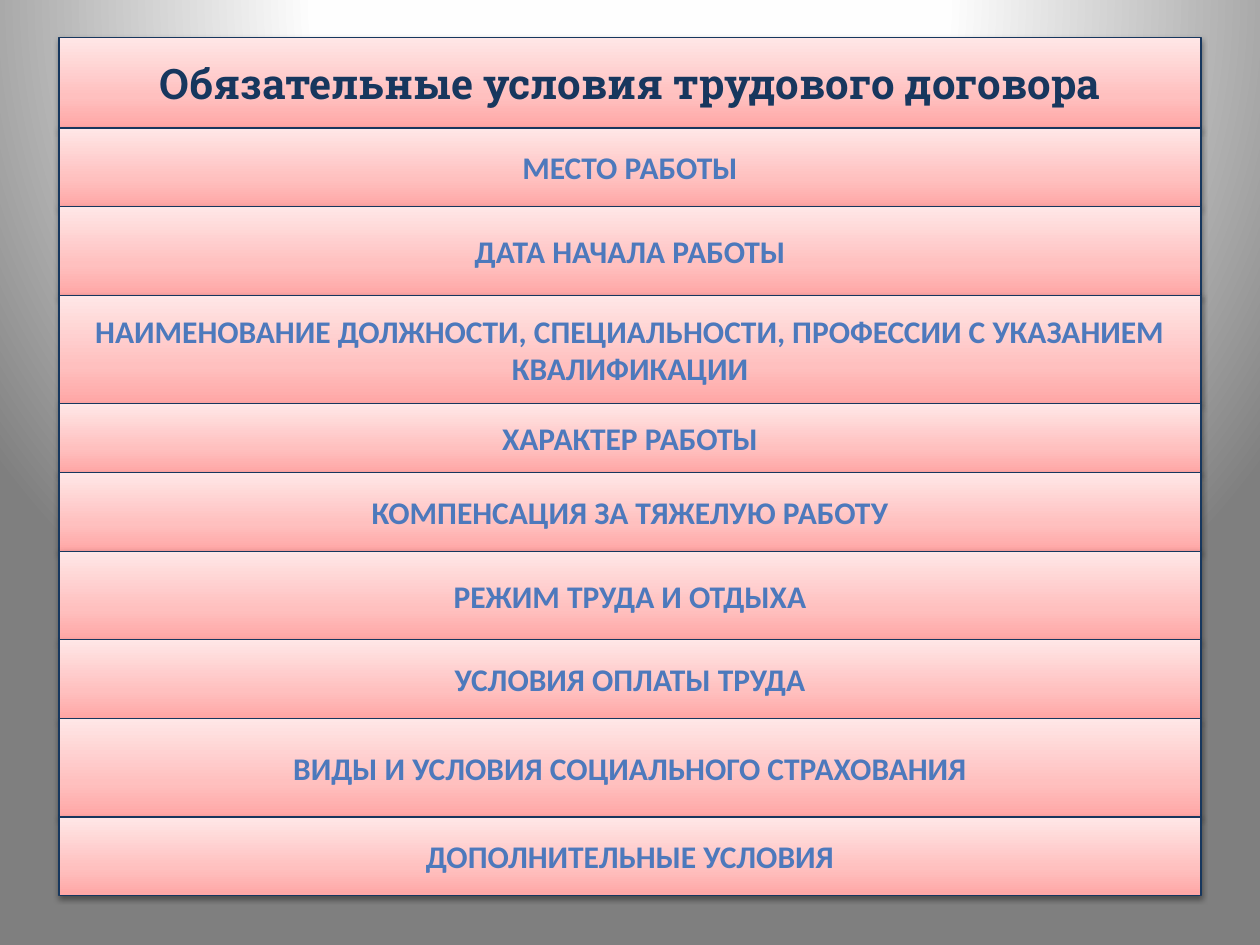
"""Build a slide stacking the mandatory terms of an employment contract."""
import pptx
import pptx.dml.color
import pptx.enum.shapes
import pptx.enum.text
import pptx.oxml
import pptx.oxml.ns
import pptx.util

RGBColor = pptx.dml.color.RGBColor
NAVY = RGBColor(0x17, 0x37, 0x5E)
BLACK = RGBColor(0, 0, 0)
PINKS = [
    (0, RGBColor(0xFF, 0xA6, 0xA5)),
    (35, RGBColor(0xFF, 0xC0, 0xBF)),
    (100, RGBColor(0xFF, 0xE7, 0xE7)),
]
BLUES = [
    (0, RGBColor(0x74, 0x94, 0xC9)),
    (49, RGBColor(0x4D, 0x79, 0xBC)),
    (50, RGBColor(0x34, 0x6A, 0xAA)),
    (92, RGBColor(0x32, 0x5F, 0x94)),
    (100, RGBColor(0x31, 0x5D, 0x91)),
]
GREYS = [
    (0, RGBColor(0xFF, 0xFF, 0xFF)),
    (40, RGBColor(0xFE, 0xFE, 0xFE)),
    (100, RGBColor(0x7F, 0x7F, 0x7F)),
]
UPWARD = '<a:lin ang="16200000" scaled="0"/>'
DOWNWARD = '<a:lin ang="5400000" scaled="0"/>'
FROM_TOP = (
    '<a:path path="circle">'
    '<a:fillToRect l="50000" t="-80000" r="50000" b="180000"/></a:path>'
)
NAMESPACE = pptx.oxml.ns.nsdecls("a")
SHADOW = (
    f'<a:outerShdw {NAMESPACE} blurRad="40000" dist="20000" dir="5400000" rotWithShape="0">'
    f'<a:srgbClr val="{BLACK}"><a:alpha val="38000"/></a:srgbClr></a:outerShdw>'
)
TITLE = "Обязательные условия трудового договора"
TERMS = [
    ("МЕСТО РАБОТЫ", 8),
    ("ДАТА НАЧАЛА РАБОТЫ", 9),
    ("НАИМЕНОВАНИЕ ДОЛЖНОСТИ, СПЕЦИАЛЬНОСТИ, ПРОФЕССИИ С УКАЗАНИЕМ КВАЛИФИКАЦИИ", 11),
    ("ХАРАКТЕР РАБОТЫ", 7),
    ("КОМПЕНСАЦИЯ ЗА ТЯЖЕЛУЮ РАБОТУ", 8),
    ("РЕЖИМ ТРУДА И ОТДЫХА", 9),
    ("УСЛОВИЯ ОПЛАТЫ ТРУДА", 8),
    ("ВИДЫ И УСЛОВИЯ СОЦИАЛЬНОГО СТРАХОВАНИЯ", 10),
    ("ДОПОЛНИТЕЛЬНЫЕ УСЛОВИЯ", 8),
]


def set_gradient(fill, parent, stops, direction):
    """Fill the parent element with a gradient of the given stops."""
    fill.solid()
    marks = "".join(
        f'<a:gs pos="{share * 1000}"><a:srgbClr val="{color}"/></a:gs>'
        for share, color in stops
    )
    gradient = pptx.oxml.parse_xml(
        f'<a:gradFill {NAMESPACE} rotWithShape="1"><a:gsLst>{marks}</a:gsLst>{direction}</a:gradFill>'
    )
    parent.replace(parent.find(pptx.oxml.ns.qn("a:solidFill")), gradient)


deck = pptx.Presentation()
deck.slide_width = pptx.util.Inches(10)
deck.slide_height = pptx.util.Inches(7.5)
page = deck.slides.add_slide(deck.slide_layouts.get_by_name("Title Only"))
background = page.background.fill
background.solid()
set_gradient(background, page.element.find(".//" + pptx.oxml.ns.qn("p:bgPr")), GREYS, FROM_TOP)

column = deck.slide_width / 128
row = deck.slide_height / 96
left, width = round(6 * column), round(116 * column)
title_top, first_term = 3.8, 13

heading = page.shapes.title
heading.left, heading.width = left, width
heading.top, heading.height = round(title_top * row), round((first_term - title_top) * row)
heading.text_frame.text = TITLE
bands = [heading]

top = first_term
for term, rows in TERMS:
    band = page.shapes.add_shape(
        pptx.enum.shapes.MSO_SHAPE.RECTANGLE, left, round(top * row), width, round(rows * row)
    )
    band.text_frame.text = term
    bands.append(band)
    top += rows

for band in bands:
    properties = band.element.spPr
    set_gradient(band.fill, properties, PINKS, UPWARD)
    band.line.color.rgb = NAVY
    band.line.width = pptx.util.Pt(0.75)
    band.shadow.inherit = False
    effects = properties.find(pptx.oxml.ns.qn("a:effectLst"))
    effects.append(pptx.oxml.parse_xml(SHADOW))
    band.text_frame.word_wrap = True
    band.text_frame.vertical_anchor = pptx.enum.text.MSO_ANCHOR.MIDDLE
    para = band.text_frame.paragraphs[0]
    para.alignment = pptx.enum.text.PP_ALIGN.CENTER
    span = para.runs[0]
    span.font.bold = True
    if band is heading:
        span.font.name = "Roboto Slab"
        span.font.size = pptx.util.Pt(24)
        span.font.color.rgb = NAVY
    else:
        span.font.name = "Calibri"
        span.font.size = pptx.util.Pt(18)
        set_gradient(span.font.fill, para.runs[0].font._rPr, BLUES, DOWNWARD)

deck.save("out.pptx")
